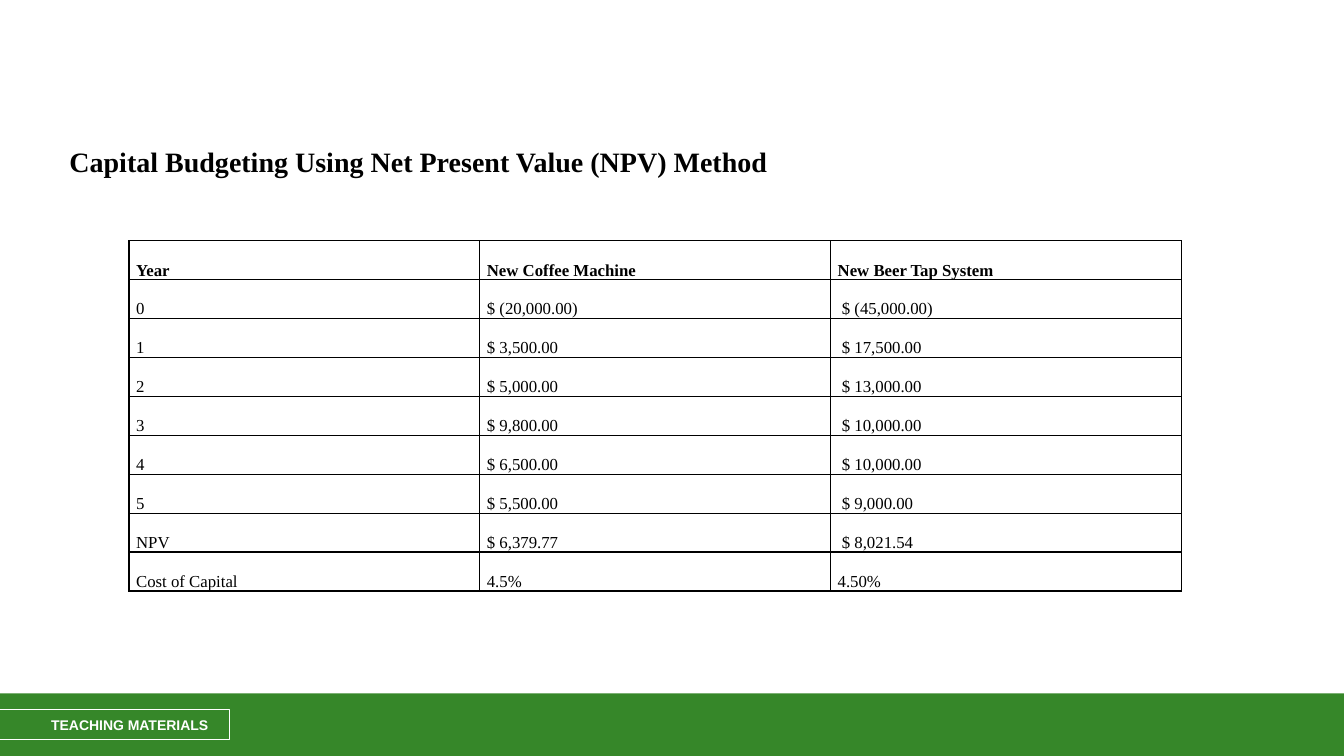
from lxml.etree import SubElement
from pptx import Presentation
from pptx.dml.color import RGBColor
from pptx.enum.shapes import MSO_SHAPE as Shape
from pptx.enum.text import MSO_ANCHOR as Anchor, PP_ALIGN as Align
from pptx.oxml.ns import qn
from pptx.util import Cm, Pt

GREEN, WHITE, BLACK = "368729", "FFFFFF", "000000"
SERIF, SANS = "Times New Roman", "Arial"


def color(value):
    return RGBColor.from_string(value)


def set_font(paragraph, name, size, value, bold):
    font = paragraph.font
    font.name, font.size, font.bold = name, Pt(size), bold
    font.color.rgb = color(value)


presentation = Presentation()
presentation.slide_width, presentation.slide_height = Cm(33.87), Cm(19.05)
slide = presentation.slides.add_slide(presentation.slide_layouts[6])

# Footer band
band = slide.shapes.add_shape(Shape.RECTANGLE, 0, Cm(17.47), Cm(33.87), Cm(1.58))
band.shadow.inherit = False
band.fill.solid()
band.fill.fore_color.rgb = color(GREEN)
band.line.fill.background()

# Footer label, open at the left edge of the slide
label = slide.shapes.add_shape(Shape.RECTANGLE, Cm(-0.71), Cm(17.88), Cm(6.5), Cm(0.76))
label.shadow.inherit = False
label.fill.background()
label.line.color.rgb = color(WHITE)
label.line.width = Pt(0.75)
frame = label.text_frame
frame.word_wrap = True
frame.vertical_anchor = Anchor.MIDDLE
frame.margin_left, frame.margin_right = Cm(2), Cm(0.25)
paragraph = frame.paragraphs[0]
paragraph.text = "TEACHING MATERIALS"
paragraph.alignment = Align.LEFT
set_font(paragraph, SANS, 10, WHITE, True)

# Title
title = slide.shapes.add_textbox(Cm(1.5), Cm(3.51), Cm(30), Cm(1.2))
title.text_frame.word_wrap = True
paragraph = title.text_frame.paragraphs[0]
paragraph.text = "Capital Budgeting Using Net Present Value (NPV) Method"
set_font(paragraph, SERIF, 20, BLACK, True)

# Cash flow table
rows = [
    ("Year", "New Coffee Machine", "New Beer Tap System"),
    ("0", "$ (20,000.00)", " $ (45,000.00)"),
    ("1", "$ 3,500.00", " $ 17,500.00"),
    ("2", "$ 5,000.00", " $ 13,000.00"),
    ("3", "$ 9,800.00", " $ 10,000.00"),
    ("4", "$ 6,500.00", " $ 10,000.00"),
    ("5", "$ 5,500.00", " $ 9,000.00"),
    ("NPV", "$ 6,379.77", " $ 8,021.54"),
    ("Cost of Capital", "4.5%", "4.50%"),
]
column_width, row_height = Cm(8.84), Cm(0.98)
table = slide.shapes.add_table(
    len(rows), 3, Cm(3.25), Cm(6.07), column_width * 3, row_height * len(rows)
).table
table.first_row = table.horz_banding = False
for column in table.columns:
    column.width = column_width

for row_index, texts in enumerate(rows):
    table.rows[row_index].height = row_height
    for column_index, text in enumerate(texts):
        cell = table.cell(row_index, column_index)
        cell.vertical_anchor = Anchor.BOTTOM
        cell.margin_left = cell.margin_right = Cm(0.18)
        cell.margin_top = cell.margin_bottom = 0
        paragraph = cell.text_frame.paragraphs[0]
        paragraph.text = text
        paragraph.line_spacing = 1.07
        paragraph.space_after = Pt(8)
        set_font(paragraph, SERIF, 12, BLACK, row_index == 0)
        # Borders come before the fill in the cell properties
        properties = cell._tc.get_or_add_tcPr()
        for side in ("a:lnL", "a:lnR", "a:lnT", "a:lnB"):
            border = SubElement(properties, qn(side), w=str(Pt(1)))
            fill = SubElement(border, qn("a:solidFill"))
            SubElement(fill, qn("a:srgbClr"), val=BLACK)
        cell.fill.background()

presentation.save("out.pptx")
